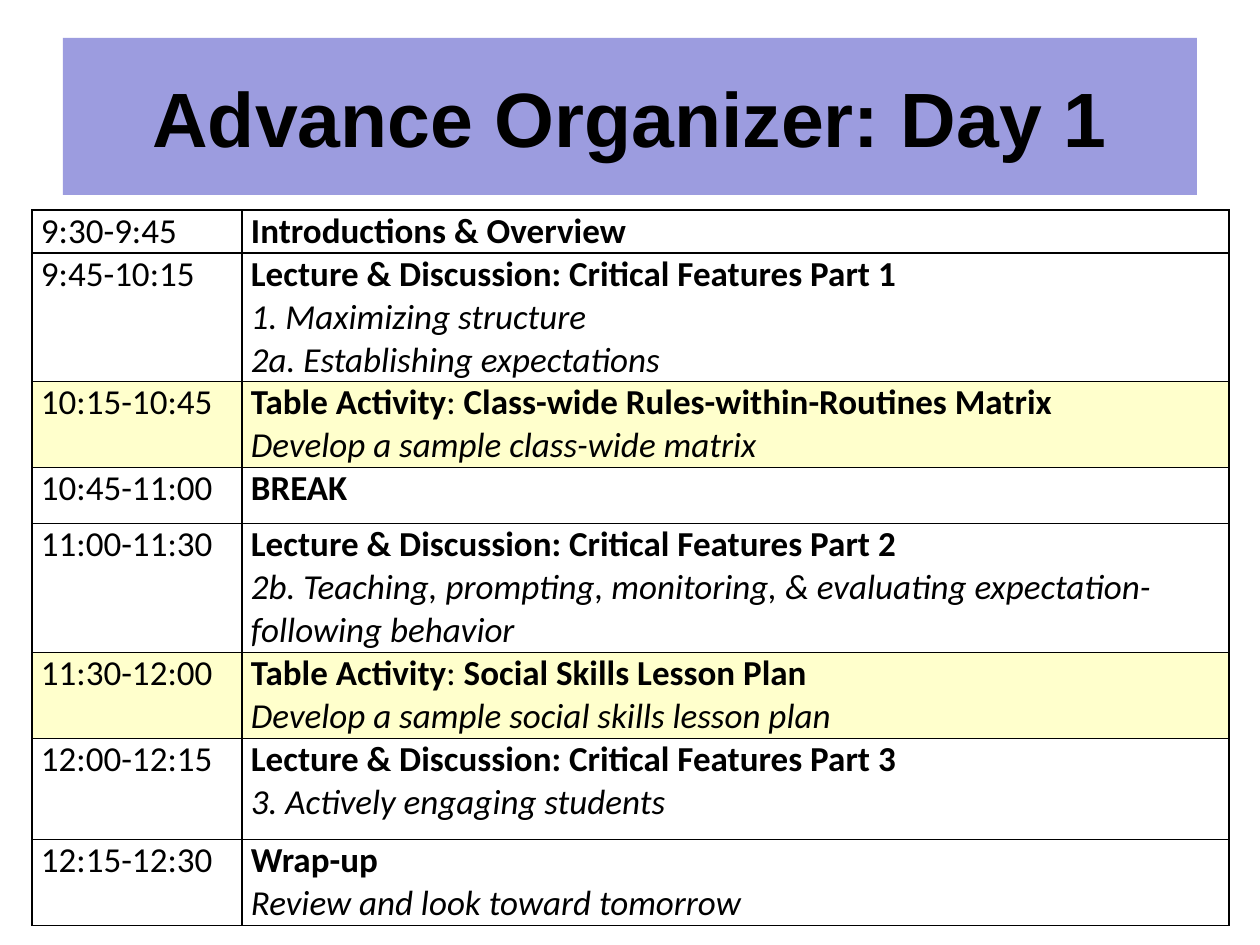
from dataclasses import dataclass
from lxml import etree
from pptx import Presentation
from pptx.dml.color import RGBColor
from pptx.enum.shapes import MSO_SHAPE
from pptx.enum.text import MSO_ANCHOR, PP_ALIGN
from pptx.oxml.ns import qn
from pptx.util import Pt

RECT = MSO_SHAPE.RECTANGLE
MIDDLE, TOP = MSO_ANCHOR.MIDDLE, MSO_ANCHOR.TOP
CENTER, LEFT = PP_ALIGN.CENTER, PP_ALIGN.LEFT
EMU = 914400 / 126  # one px


@dataclass(frozen=True)
class Theme:
    ink: str = "000000"
    band: str = "9C9CDF"
    mark: str = "FFFFCC"
    head: str = "Arial"
    body: str = "Calibri"
    big: int = 44
    text: int = 20
    rule: int = 1


THEME = Theme()
BOLD, ITAL = {"bold": True}, {"italic": True}


def px(n):
    return round(n * EMU)


def write(frame, lines, size=THEME.text, font=THEME.body, align=LEFT):
    """Each line is a list of (text, style) runs."""
    frame.word_wrap = True
    for i, line in enumerate(lines):
        para = frame.paragraphs[0] if i == 0 else frame.add_paragraph()
        para.alignment = align
        for text, style in line:
            run = para.add_run()
            run.text = text
            run.font.name, run.font.size = font, Pt(size)
            run.font.bold = style.get("bold", False)
            run.font.italic = style.get("italic", False)
            run.font.color.rgb = RGBColor.from_string(THEME.ink)


def border(cell):
    props = cell._tc.get_or_add_tcPr()
    for i, side in enumerate(("a:lnL", "a:lnR", "a:lnT", "a:lnB")):
        line = etree.Element(qn(side), w=str(Pt(THEME.rule)))
        fill = etree.SubElement(line, qn("a:solidFill"))
        etree.SubElement(fill, qn("a:srgbClr"), val=THEME.ink)
        props.insert(i, line)  # borders come before the fill


def title(slide, box, text):
    shape = slide.shapes.add_shape(RECT, *map(px, box))
    shape.shadow.inherit = False
    shape.fill.solid()
    shape.fill.fore_color.rgb = RGBColor.from_string(THEME.band)
    shape.line.fill.background()
    shape.text_frame.vertical_anchor = MIDDLE
    write(shape.text_frame, [[(text, BOLD)]], THEME.big, THEME.head, CENTER)


def agenda(slide, box, first, rows):
    """Two columns, the first one `first` px wide."""
    frame = slide.shapes.add_table(len(rows), 2, *map(px, box))
    table = frame.table
    table.first_row = table.horz_banding = False
    for col, wide in zip(table.columns, (first, box[2] - first)):
        col.width = px(wide)
    for row, (high, time, topic, notes) in zip(table.rows, rows):
        row.height = px(high)
        # An activity has a plain colon between two bold parts
        kind, colon, name = topic.partition(": ")
        active = kind == "Table Activity"
        if active:
            lead = [(kind, BOLD), (colon, {}), (name, BOLD)]
        else:
            lead = [(topic, BOLD)]
        parts = [[[(time, {})]], [lead] + [[(note, ITAL)] for note in notes]]
        for cell, lines in zip(row.cells, parts):
            cell.margin_left = cell.margin_right = px(9)
            cell.margin_top = cell.margin_bottom = 0
            cell.vertical_anchor = TOP
            if active:
                cell.fill.solid()
                cell.fill.fore_color.rgb = RGBColor.from_string(THEME.mark)
            else:
                cell.fill.background()
            border(cell)
            write(cell.text_frame, lines)


# Row height, time, topic, notes
ROWS = [
    (43, "9:30-9:45", "Introductions & Overview", []),
    (128, "9:45-10:15", "Lecture & Discussion: Critical Features Part 1",
     ["1. Maximizing structure", "2a. Establishing expectations"]),
    (86, "10:15-10:45", "Table Activity: Class-wide Rules-within-Routines Matrix",
     ["Develop a sample class-wide matrix"]),
    (56, "10:45-11:00", "BREAK", []),
    (129, "11:00-11:30", "Lecture & Discussion: Critical Features Part 2",
     ["2b. Teaching, prompting, monitoring, & evaluating "
      "expectation-following behavior"]),
    (86, "11:30-12:00", "Table Activity: Social Skills Lesson Plan",
     ["Develop a sample social skills lesson plan"]),
    (101, "12:00-12:15", "Lecture & Discussion: Critical Features Part 3",
     ["3. Actively engaging students"]),
    (86, "12:15-12:30", "Wrap-up", ["Review and look toward tomorrow"]),
]


def main():
    deck = Presentation()
    deck.slide_width, deck.slide_height = px(1260), px(945)
    slide = deck.slides.add_slide(deck.slide_layouts[6])
    title(slide, (63, 38, 1134, 157), "Advance Organizer: Day 1")
    high = sum(row[0] for row in ROWS)
    agenda(slide, (32, 210, 1197, high), 210, ROWS)
    deck.save("out.pptx")


if __name__ == "__main__":
    main()
